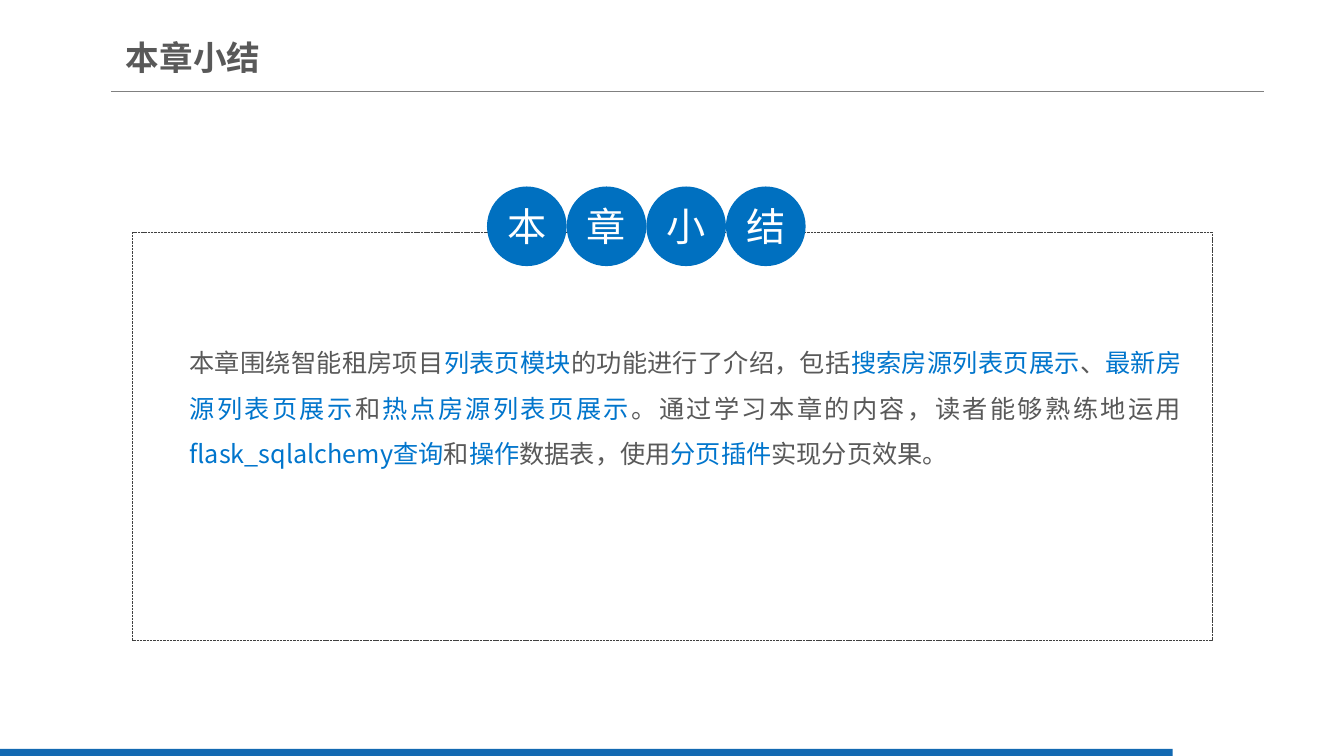
import pptx
import pptx.util
import pptx.dml.color
import pptx.enum.dml
import pptx.enum.shapes
import pptx.enum.text
import pptx.oxml.ns
import lxml.etree
from dataclasses import dataclass

TITLE = "本章小结"
SUMMARY = [
    ("本章围绕智能租房项目", False),
    ("列表页模块", True),
    ("的功能进行了介绍，包括", False),
    ("搜索房源列表页展示", True),
    ("、", False),
    ("最新房源列表页展示", True),
    ("和", False),
    ("热点房源列表页展示", True),
    ("。通过学习本章的内容，读者能够熟练地运用", False),
    ("flask_sqlalchemy查询", True),
    ("和", False),
    ("操作", True),
    ("数据表，使用", False),
    ("分页插件", True),
    ("实现分页效果。", False),
]

SLIDE_SIZE = (1333, 750)
RULE = (110, 91, 1254, 91)
FOOTER_BAR = (0, 743, 1163, 9)
TITLE_BOX = (125, 29, 620, 55)
FRAME = (131, 230, 1071, 405)
SUMMARY_BOX = (188, 330, 984, 136)
BADGE_LEFT, BADGE_TOP, BADGE_SIZE = 483, 185, 79


@dataclass(frozen=True)
class Theme:
    font: str = "Noto Sans CJK SC"
    text: str = "595959"
    highlight: str = "0075CC"
    badge: str = "0070C0"
    badge_text: str = "FFFFFF"
    bar: str = "1369B2"
    rule: str = "808080"
    frame: str = "404040"
    title_size: int = 24
    body_size: int = 18
    badge_size: int = 28


THEME = Theme()
SHAPES = pptx.enum.shapes.MSO_SHAPE
ANCHOR = pptx.enum.text.MSO_ANCHOR
ALIGN = pptx.enum.text.PP_ALIGN


def px(*lengths):
    return [pptx.util.Emu(length * 9144) for length in lengths]


def rgb(value):
    return pptx.dml.color.RGBColor.from_string(value)


def write_text(shape, runs, *, size, bold=False, align=ALIGN.LEFT, anchor=ANCHOR.TOP,
               spacing=1.0, inset=0):
    frame = shape.text_frame
    frame.word_wrap = True
    frame.vertical_anchor = anchor
    frame.margin_left = frame.margin_right = 0
    frame.margin_top = frame.margin_bottom = px(inset)[0]
    paragraph = frame.paragraphs[0]
    paragraph.alignment = align
    paragraph.line_spacing = spacing
    for text, color in runs:
        run = paragraph.add_run()
        run.text = text
        run.font.size = pptx.util.Pt(size)
        run.font.bold = bold
        run.font.color.rgb = rgb(color)
        run.font.name = THEME.font
        east_asian = lxml.etree.SubElement(run.font._element, pptx.oxml.ns.qn("a:ea"))
        east_asian.set("typeface", THEME.font)


def add_filled(slide, kind, box, color):
    shape = slide.shapes.add_shape(kind, *px(*box))
    shape.shadow.inherit = False
    shape.fill.solid()
    shape.fill.fore_color.rgb = rgb(color)
    shape.line.fill.background()
    return shape


def add_rule(slide):
    connector = slide.shapes.add_connector(
        pptx.enum.shapes.MSO_CONNECTOR.STRAIGHT, *px(*RULE))
    connector.line.color.rgb = rgb(THEME.rule)
    connector.line.width = pptx.util.Pt(0.75)
    lxml.etree.SubElement(connector._element.spPr, pptx.oxml.ns.qn("a:effectLst"))


def add_frame(slide):
    shape = slide.shapes.add_shape(SHAPES.ROUNDED_RECTANGLE, *px(*FRAME))
    shape.adjustments[0] = 0
    shape.shadow.inherit = False
    shape.fill.background()
    shape.line.color.rgb = rgb(THEME.frame)
    shape.line.width = pptx.util.Pt(0.25)
    shape.line.dash_style = pptx.enum.dml.MSO_LINE.SQUARE_DOT


def main():
    presentation = pptx.Presentation()
    presentation.slide_width, presentation.slide_height = px(*SLIDE_SIZE)
    slide = presentation.slides.add_slide(presentation.slide_layouts[6])

    add_rule(slide)
    add_filled(slide, SHAPES.RECTANGLE, FOOTER_BAR, THEME.bar)
    title = slide.shapes.add_textbox(*px(*TITLE_BOX))
    write_text(title, [(TITLE, THEME.text)], size=THEME.title_size, bold=True,
               anchor=ANCHOR.MIDDLE, inset=7)

    add_frame(slide)
    summary = slide.shapes.add_textbox(*px(*SUMMARY_BOX))
    runs = [(text, THEME.highlight if marked else THEME.text) for text, marked in SUMMARY]
    write_text(summary, runs, size=THEME.body_size, align=ALIGN.JUSTIFY, spacing=1.5)
    summary.text_frame.auto_size = pptx.enum.text.MSO_AUTO_SIZE.SHAPE_TO_FIT_TEXT

    for index, character in enumerate(TITLE):
        box = (BADGE_LEFT + index * BADGE_SIZE, BADGE_TOP, BADGE_SIZE, BADGE_SIZE)
        badge = add_filled(slide, SHAPES.OVAL, box, THEME.badge)
        write_text(badge, [(character, THEME.badge_text)], size=THEME.badge_size,
                   align=ALIGN.CENTER, anchor=ANCHOR.MIDDLE)

    presentation.save("out.pptx")


if __name__ == "__main__":
    main()
